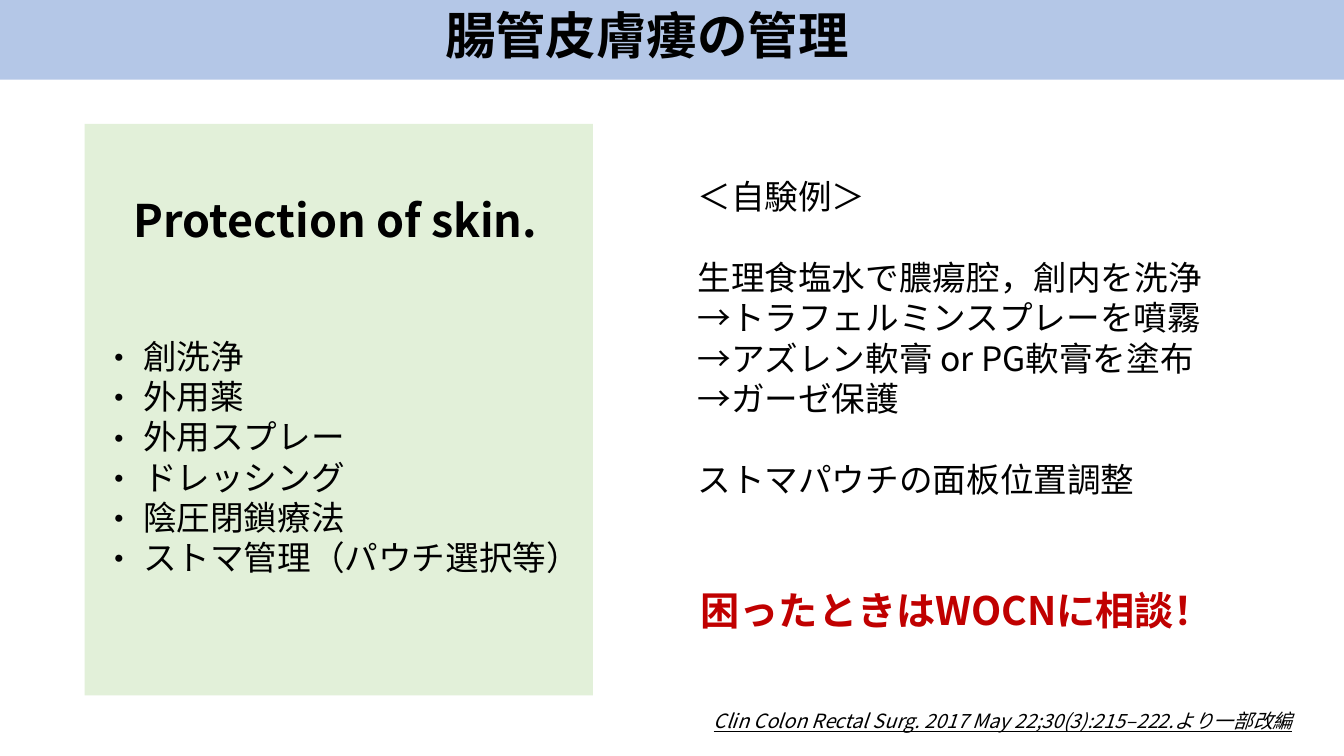
from dataclasses import dataclass

from lxml.etree import SubElement
from pptx import Presentation
from pptx.dml.color import RGBColor
from pptx.enum.shapes import MSO_SHAPE
from pptx.enum.text import MSO_ANCHOR, PP_ALIGN
from pptx.oxml.ns import qn
from pptx.util import Inches, Pt

FONT = "Noto Sans CJK JP"
BODY_LINE = Pt(28.8)


@dataclass
class Style:
    size: int
    color: str = "000000"
    bold: bool = False
    italic: bool = False
    underline: bool = False


@dataclass
class TextBlock:
    left: float
    top: float
    width: float
    height: float
    lines: list[str]
    style: Style
    bullet: str = ""
    gap_before: tuple[int, ...] = ()


def rgb(color: str) -> RGBColor:
    return RGBColor.from_string(color)


def paint(sp, color: str) -> None:
    sp.fill.solid()
    sp.fill.fore_color.rgb = rgb(color)
    sp.line.fill.background()


def place(sp, left: float, top: float, width: float, height: float) -> None:
    sp.left, sp.top = Inches(left), Inches(top)
    sp.width, sp.height = Inches(width), Inches(height)


def format_runs(p, style: Style) -> None:
    for r in p.runs:
        font = r.font
        font.name = FONT
        font.size = Pt(style.size)
        font.bold = style.bold
        font.italic = style.italic
        font.underline = style.underline
        font.color.rgb = rgb(style.color)
        latin = r._r.rPr.find(qn("a:latin"))
        ea = SubElement(r._r.rPr, qn("a:ea"), typeface=FONT)
        latin.addnext(ea)


def add_bullet(p, mark: str) -> None:
    pPr = p._p.get_or_add_pPr()
    pPr.set("marL", str(Inches(0.4)))
    pPr.set("indent", str(-Inches(0.4)))
    SubElement(pPr, qn("a:buFont"), typeface=FONT)
    SubElement(pPr, qn("a:buChar"), char=mark)


def add_text(slide, block: TextBlock) -> None:
    sp = slide.shapes.add_textbox(0, 0, 0, 0)
    place(sp, block.left, block.top, block.width, block.height)
    tf = sp.text_frame
    tf.word_wrap = True
    tf.text = "\n".join(block.lines)
    for i, p in enumerate(tf.paragraphs):
        format_runs(p, block.style)
        if i in block.gap_before:
            p.space_before = BODY_LINE
        if block.bullet:
            add_bullet(p, block.bullet)


def add_title(slide, text: str) -> None:
    title = slide.shapes.title
    place(title, 0, -0.11, 13.33, 0.9)
    paint(title, "B4C7E7")
    tf = title.text_frame
    tf.text = text
    tf.vertical_anchor = MSO_ANCHOR.MIDDLE
    tf.margin_right = Inches(0.6)
    p = tf.paragraphs[0]
    p.alignment = PP_ALIGN.CENTER
    p.line_spacing = 1.0
    format_runs(p, Style(36, bold=True))


BODY = Style(24)
BLOCKS = [
    TextBlock(1.23, 1.86, 4.25, 0.64, ["Protection of skin."], Style(32, bold=True)),
    TextBlock(
        6.98, 6.98, 6.12, 0.34,
        ["Clin Colon Rectal Surg. 2017 May 22;30(3):215–222.より一部改編"],
        Style(14, italic=True, underline=True),
    ),
    TextBlock(
        6.82, 1.7, 6.43, 3.74,
        [
            "＜自験例＞",
            "生理食塩水で膿瘍腔，創内を洗浄",
            "→トラフェルミンスプレーを噴霧",
            "→アズレン軟膏 or PG軟膏を塗布",
            "→ガーゼ保護",
            "ストマパウチの面板位置調整",
        ],
        BODY,
        gap_before=(1, 5),
    ),
    TextBlock(
        0.92, 3.28, 5.12, 2.52,
        [
            "創洗浄",
            "外用薬",
            "外用スプレー",
            "ドレッシング",
            "陰圧閉鎖療法",
            "ストマ管理（パウチ選択等）",
        ],
        BODY,
        bullet="・",
    ),
    TextBlock(
        6.85, 5.77, 5.41, 0.57,
        ["困ったときはWOCNに相談！"],
        Style(28, "C00000", bold=True),
    ),
]


def main() -> None:
    prs = Presentation()
    prs.slide_width, prs.slide_height = Inches(13.33), Inches(7.5)
    slide = prs.slides.add_slide(prs.slide_layouts[5])
    add_title(slide, "腸管皮膚瘻の管理")
    panel = slide.shapes.add_shape(MSO_SHAPE.RECTANGLE, 0, 0, 0, 0)
    place(panel, 0.84, 1.23, 5.04, 5.67)
    panel.shadow.inherit = False
    paint(panel, "E2F0D9")
    for block in BLOCKS:
        add_text(slide, block)
    prs.save("out.pptx")


if __name__ == "__main__":
    main()
